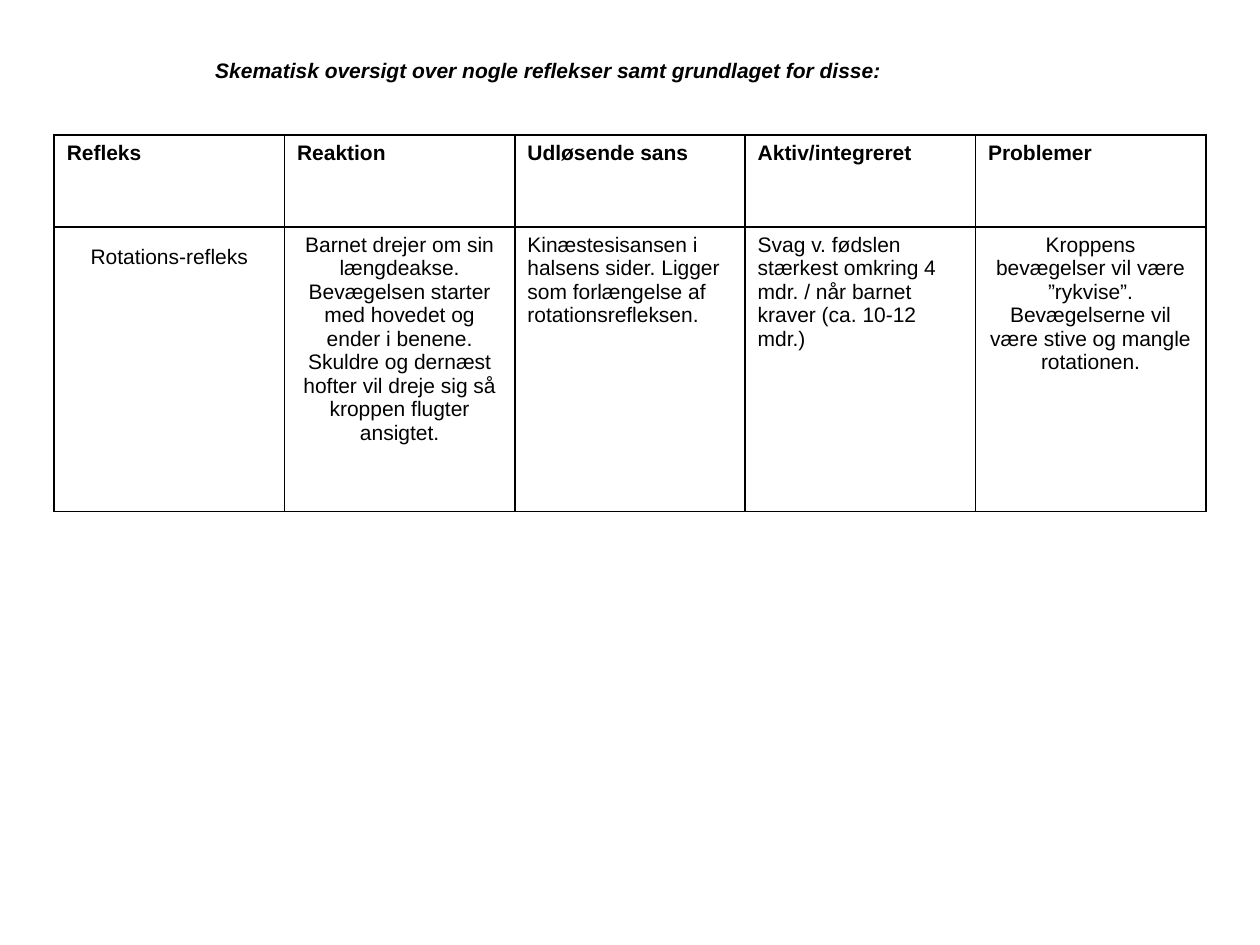
from lxml import etree
from pptx import Presentation
from pptx.dml.color import RGBColor
from pptx.enum import text
from pptx.oxml import ns
from pptx.util import Inches, Pt

TITLE = "Skematisk oversigt over nogle reflekser samt grundlaget for disse:"
HEADINGS = ["Refleks", "Reaktion", "Udløsende sans", "Aktiv/integreret", "Problemer"]
LEFT, CENTER = text.PP_ALIGN.LEFT, text.PP_ALIGN.CENTER
REFLEX = [
    (["Rotations-refleks"], CENTER, 0.15),
    (["Barnet drejer om sin længdeakse. Bevægelsen starter med hovedet og ender i benene.",
      "Skuldre og dernæst hofter vil dreje sig så kroppen flugter ansigtet."], CENTER, 0.05),
    (["Kinæstesisansen i halsens sider. Ligger som forlængelse af rotationsrefleksen."], LEFT, 0.05),
    (["Svag v. fødslen stærkest omkring 4 mdr. / når barnet kraver (ca. 10-12 mdr.)"], LEFT, 0.05),
    (["Kroppens bevægelser vil være ”rykvise”.",
      "Bevægelserne vil være stive og mangle rotationen."], CENTER, 0.05),
]
ROWS = [[([heading], LEFT, 0.05) for heading in HEADINGS], REFLEX]
ROW_HEIGHTS = [0.73, 2.26]
TABLE_LEFT, TABLE_TOP, TABLE_WIDTH = 0.43, 1.07, 9.14
BLACK = "000000"


def color(value):
    return RGBColor.from_string(value)


def write(frame, paragraphs, align=LEFT, bold=False, italic=False, size=12):
    for index, words in enumerate(paragraphs):
        para = frame.add_paragraph() if index else frame.paragraphs[0]
        para.alignment = align
        span = para.add_run()
        span.text = words
        span.font.name = "Arial"
        span.font.size = Pt(size)
        span.font.bold = bold
        span.font.italic = italic
        span.font.color.rgb = color(BLACK)


def add_borders(cell, width=1):
    properties = cell._tc.get_or_add_tcPr()
    for position, side in enumerate(("lnL", "lnR", "lnT", "lnB")):
        line = etree.Element(ns.qn(f"a:{side}"), w=str(Pt(width)))
        fill = etree.SubElement(line, ns.qn("a:solidFill"))
        etree.SubElement(fill, ns.qn("a:srgbClr"), val=BLACK)
        properties.insert(position, line)


def add_reflex_table(page):
    table = page.shapes.add_table(
        len(ROWS), len(HEADINGS), Inches(TABLE_LEFT), Inches(TABLE_TOP),
        Inches(TABLE_WIDTH), Inches(sum(ROW_HEIGHTS))).table
    table.horz_banding = False
    for column in table.columns:
        column.width = Inches(TABLE_WIDTH / len(HEADINGS))
    for row_index, (cells, height) in enumerate(zip(ROWS, ROW_HEIGHTS)):
        table.rows[row_index].height = Inches(height)
        for column_index, (paragraphs, align, margin) in enumerate(cells):
            cell = table.cell(row_index, column_index)
            cell.fill.background()
            cell.margin_top = Inches(margin)
            write(cell.text_frame, paragraphs, align=align, bold=row_index == 0)
            add_borders(cell)


def main():
    deck = Presentation()
    deck.slide_width, deck.slide_height = Inches(10), Inches(7.5)
    page = deck.slides.add_slide(deck.slide_layouts[6])
    box = page.shapes.add_textbox(Inches(1.61), Inches(0.41), Inches(5.49), Inches(0.6))
    box.text_frame.word_wrap = False
    write(box.text_frame, [TITLE], bold=True, italic=True)
    add_reflex_table(page)
    deck.save("out.pptx")


if __name__ == "__main__":
    main()
